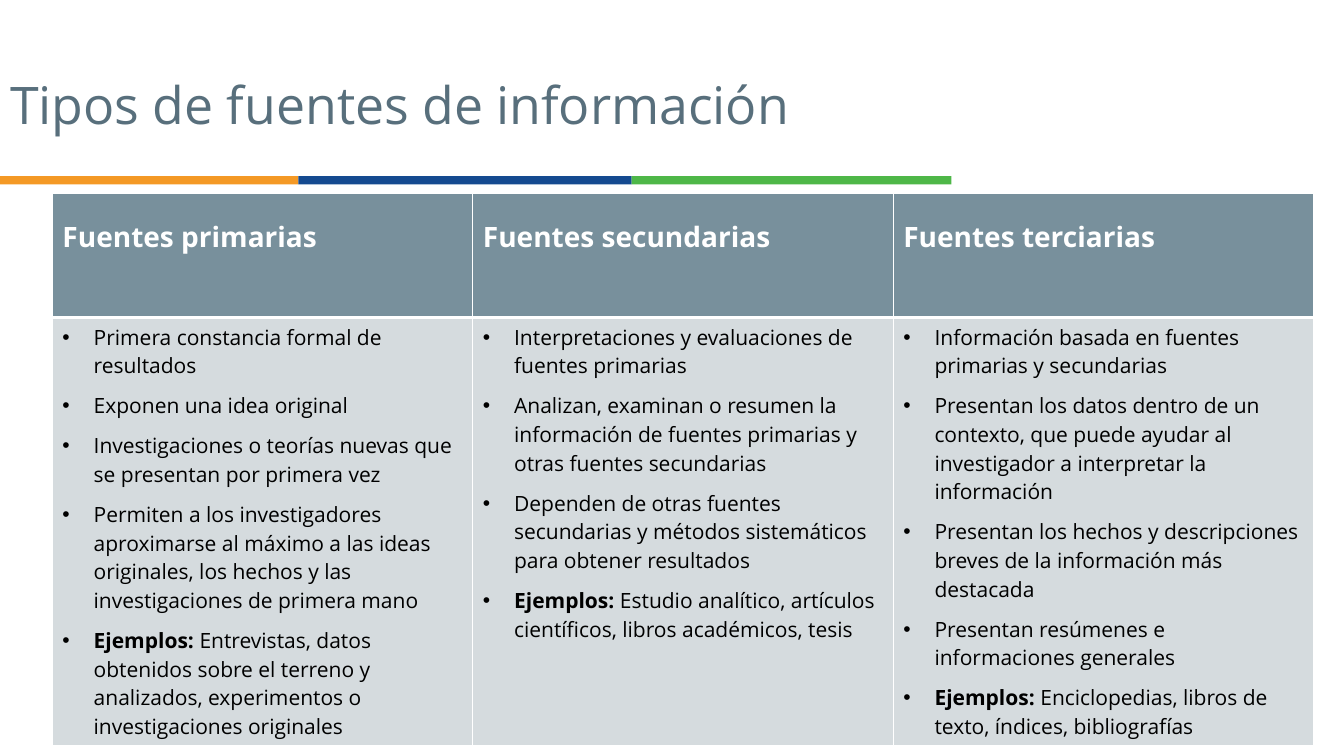
from dataclasses import dataclass

from lxml import etree
from pptx import Presentation
from pptx import util as u
from pptx.dml.color import RGBColor
from pptx.enum import shapes, text
from pptx.oxml.ns import qn

FONT = "Open Sans"
COLORS = {
    "orange": "F49925", "blue": "154A90", "green": "4EB748",
    "title": "586F7C", "header": "78909C", "body": "D5DBDE",
    "white": "FFFFFF", "black": "000000",
}
SLIDE_W, SLIDE_H = u.Inches(13.33), u.Inches(7.5)
COLUMN_W = u.Inches(4.17)
HEADER_H, BODY_H = u.Inches(1.23), u.Inches(4.14)
HANGING = u.Inches(0.31)
EXAMPLES_LABEL = "Ejemplos:"


@dataclass
class Band:
    color: str
    width: float  # share of the slide width


@dataclass
class Source:
    heading: str
    features: list[str]
    examples: str


BANDS = [Band("orange", 0.222), Band("blue", 0.248), Band("green", 0.238)]

SOURCES = [
    Source("Fuentes primarias", [
        "Primera constancia formal de resultados",
        "Exponen una idea original",
        "Investigaciones o teorías nuevas que se presentan por primera vez",
        "Permiten a los investigadores aproximarse al máximo a las ideas originales, "
        "los hechos y las investigaciones de primera mano",
    ], "Entrevistas, datos obtenidos sobre el terreno y analizados, "
       "experimentos o investigaciones originales"),
    Source("Fuentes secundarias", [
        "Interpretaciones y evaluaciones de fuentes primarias",
        "Analizan, examinan o resumen la información de fuentes primarias "
        "y otras fuentes secundarias",
        "Dependen de otras fuentes secundarias y métodos sistemáticos "
        "para obtener resultados",
    ], "Estudio analítico, artículos científicos, libros académicos, tesis"),
    Source("Fuentes terciarias", [
        "Información basada en fuentes primarias y secundarias",
        "Presentan los datos dentro de un contexto, que puede ayudar al investigador "
        "a interpretar la información",
        "Presentan los hechos y descripciones breves de la información más destacada",
        "Presentan resúmenes e informaciones generales",
    ], "Enciclopedias, libros de texto, índices, bibliografías"),
]


def across(share: float) -> int:
    return round(SLIDE_W * share)


def down(share: float) -> int:
    return round(SLIDE_H * share)


def rgb(name: str) -> RGBColor:
    return RGBColor.from_string(COLORS[name])


def set_font(paragraph, size: float, color: str, bold: bool | None = None) -> None:
    font = paragraph.font
    font.name, font.size, font.bold = FONT, u.Pt(size), bold
    font.color.rgb = rgb(color)


def add_bullet(paragraph) -> None:
    props = paragraph._p.get_or_add_pPr()
    props.set("marL", str(HANGING))
    props.set("indent", str(-HANGING))
    bullet_color = etree.SubElement(props, qn("a:buClr"))
    etree.SubElement(bullet_color, qn("a:srgbClr"), val=COLORS["black"])
    etree.SubElement(props, qn("a:buFont"), typeface="Arial")
    etree.SubElement(props, qn("a:buChar"), char="•")


def style_cell(cell, fill: str, top: float, bottom: float) -> None:
    props = cell._tc.get_or_add_tcPr()
    for side, width in (("L", 1), ("R", 1), ("T", top), ("B", bottom)):
        border = etree.SubElement(props, qn(f"a:ln{side}"), w=str(u.Pt(width)))
        solid = etree.SubElement(border, qn("a:solidFill"))
        etree.SubElement(solid, qn("a:srgbClr"), val=COLORS["white"])
    cell.fill.solid()
    cell.fill.fore_color.rgb = rgb(fill)


def add_bands(slide, bands: list[Band]) -> None:
    left = 0.0
    for band in bands:
        bar = slide.shapes.add_shape(shapes.MSO_SHAPE.RECTANGLE, across(left),
                                     down(0.233), across(band.width), down(0.011))
        bar.shadow.inherit = False
        bar.fill.solid()
        bar.fill.fore_color.rgb = rgb(band.color)
        bar.line.fill.background()
        left += band.width


def fill_title(slide, wording: str) -> None:
    title = slide.shapes.title
    title.left, title.top = 0, down(0.064)
    title.width, title.height = across(0.688), down(0.157)
    frame = title.text_frame
    frame.text = wording
    frame.vertical_anchor = text.MSO_ANCHOR.MIDDLE
    heading = frame.paragraphs[0]
    heading.alignment = text.PP_ALIGN.LEFT
    heading.line_spacing = 0.9
    set_font(heading, 37, "title")


def fill_heading(cell, heading: str) -> None:
    style_cell(cell, "header", top=1, bottom=3)
    cell.text = heading
    paragraph = cell.text_frame.paragraphs[0]
    paragraph.line_spacing = 1.5
    set_font(paragraph, 20, "white", bold=True)


def fill_features(cell, source: Source) -> None:
    style_cell(cell, "body", top=3, bottom=1)
    frame = cell.text_frame
    frame.text = "\n".join([*source.features, EXAMPLES_LABEL])
    for index, paragraph in enumerate(frame.paragraphs):
        paragraph.space_before = u.Pt(4 if index else 0)
        paragraph.space_after = u.Pt(4)
        add_bullet(paragraph)
        set_font(paragraph, 15, "black")
    examples = frame.paragraphs[-1]
    examples.runs[0].font.bold = True
    examples.add_run().text = f" {source.examples}"


def add_sources_table(slide, sources: list[Source]) -> None:
    table = slide.shapes.add_table(2, len(sources), across(0.039), down(0.256),
                                   COLUMN_W * len(sources), HEADER_H + BODY_H).table
    table.rows[0].height, table.rows[1].height = HEADER_H, BODY_H
    for column, source in enumerate(sources):
        table.columns[column].width = COLUMN_W
        fill_heading(table.cell(0, column), source.heading)
        fill_features(table.cell(1, column), source)


def main() -> None:
    deck = Presentation()
    deck.slide_width, deck.slide_height = SLIDE_W, SLIDE_H
    slide = deck.slides.add_slide(deck.slide_layouts[5])  # title only
    add_bands(slide, BANDS)
    fill_title(slide, "Tipos de fuentes de información")
    add_sources_table(slide, SOURCES)
    deck.save("out.pptx")


if __name__ == "__main__":
    main()
